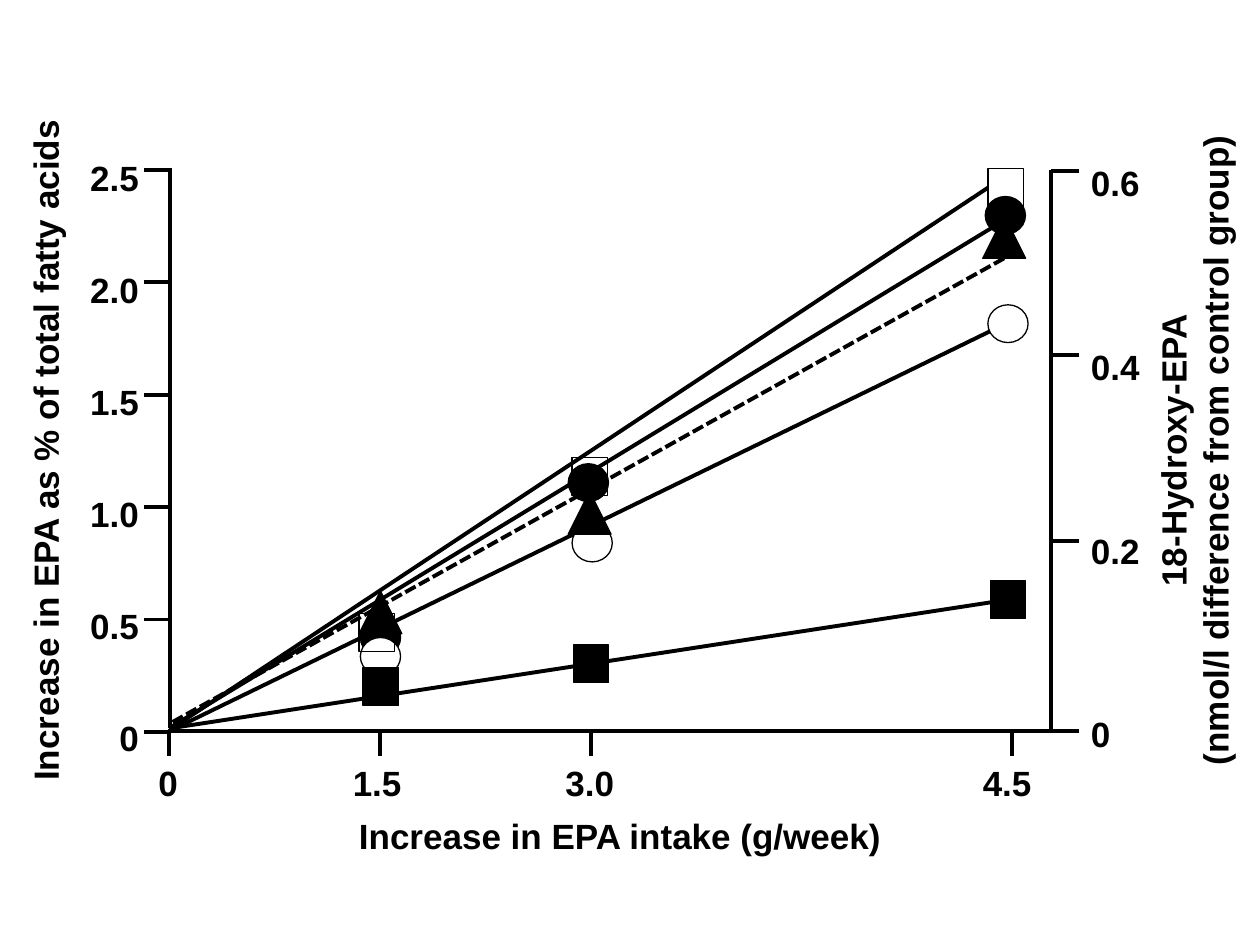
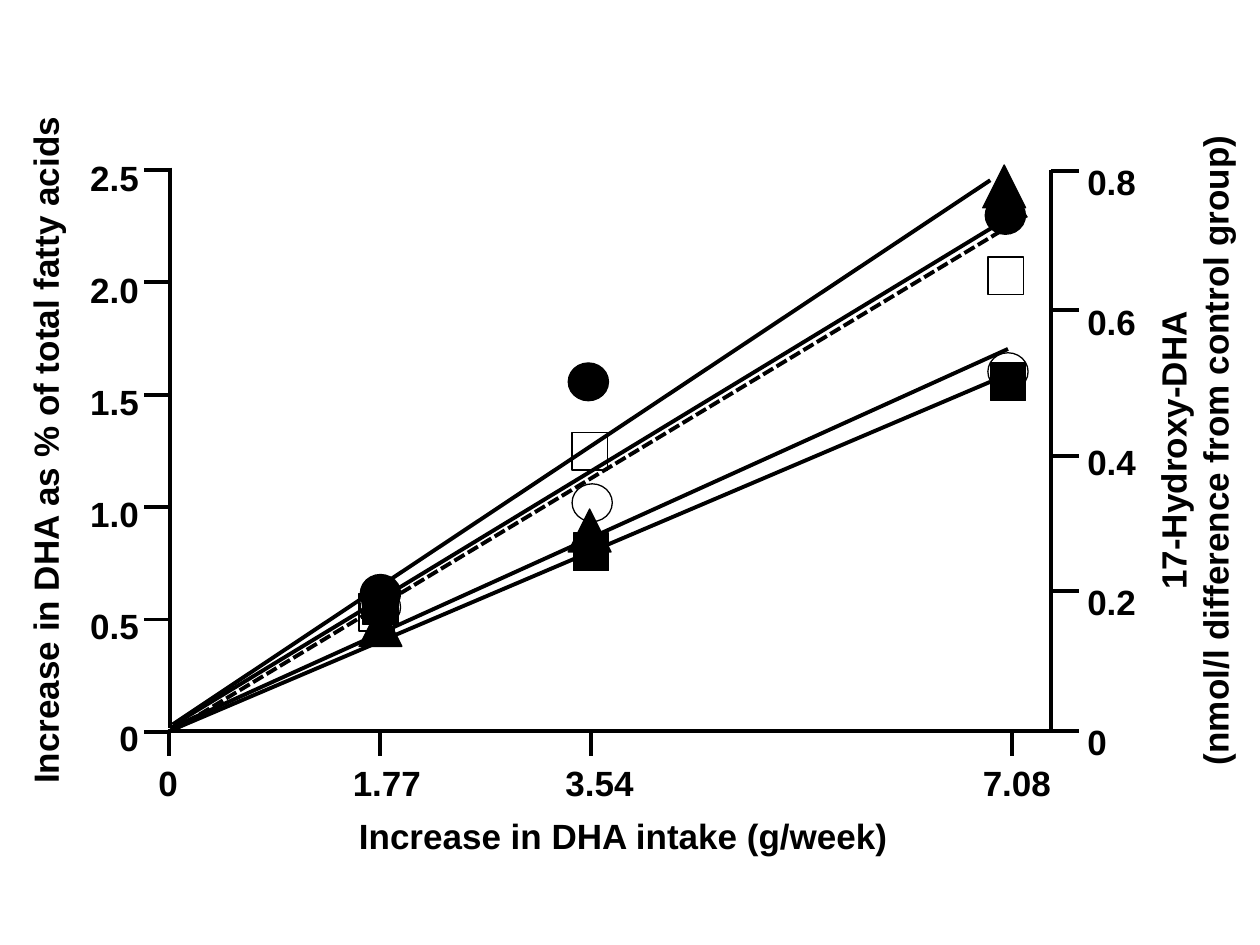
from pptx import Presentation
from pptx.dml.color import RGBColor
from pptx.enum.dml import MSO_LINE
from pptx.enum.shapes import MSO_CONNECTOR, MSO_SHAPE
from pptx.enum.text import PP_ALIGN
from pptx.oxml.ns import qn
from pptx.util import Pt
from lxml.etree import SubElement

COLORS = {"ink": "000000", "paper": "FFFFFF"}
FONT = "Arial"
PLOT = (97, 97, 503.5, 320.7)  # left, top, width, height
TICK = 14.5
DOSE_STEP = 120.5
DOSE_STEPS = (0, 1, 2, 4)
LABEL_STOPS = (111, 232.5, 471)

# Marker: shape, fill, width, height, left edge at each dose
MARKERS = {
    "filled circle": (MSO_SHAPE.OVAL, "ink", 23, 21.6, (108.9, 227.7, 466)),
    "open circle": (MSO_SHAPE.OVAL, "paper", 23, 21.6, (108.9, 229.9, 467.5)),
    "filled square": (MSO_SHAPE.RECTANGLE, "ink", 20.2, 21.6, (110.4, 230.6, 468.9)),
    "open square": (MSO_SHAPE.RECTANGLE, None, 20.2, 21.6, (108.2, 229.9, 467.5)),
    "triangle": (MSO_SHAPE.ISOSCELES_TRIANGLE, "ink", 24.5, 24.5, (108.2, 227.7, 464.6)),
}

# Positions are relative to the plot box
EPA = {
    "acid": "EPA",
    "metabolite": "18-Hydroxy-EPA",
    "doses": ("0", "1.5", "3.0", "4.5"),
    "right_labels": ("0.6", "0.4", "0.2", "0"),
    "right_label_box": (519.3, -19.2, 42.5, 356),
    "right_spacing": (35, 70),
    "right_ticks": (0.9, 106, 211.9, 320.6),
    "back_trends": ((0.2, 319.9, 467.5, 10.3), (0.2, 320.6, 477.6, 88)),
    "front_trends": ((-0.5, 319.2, 469.6, 33.3), (0.2, 319.2, 479, 245.7)),
    "dashed_trend": (1.6, 315.6, 476.8, 50.6),
    "tops": {
        "filled circle": (256.5, 168, 15.3),
        "open circle": (267.3, 202.5, 77.2),
        "filled square": (284.6, 271.6, 234.9),
        "open square": (253.6, 164.4, -0.5),
        "triangle": (240.7, 183.8, 26.1),
    },
}
DHA = {
    "acid": "DHA",
    "metabolite": "17-Hydroxy-DHA",
    "doses": ("0", "1.77", "3.54", "7.08"),
    "right_labels": ("0.8", "0.6", "0.4", "0.2", "0"),
    "right_label_box": (517.2, -25, 42.5, 365),
    "right_spacing": (40, 40),
    "right_ticks": (0.9, 80.1, 163.6, 240.7, 320.6),
    "back_trends": ((1.6, 317, 468.9, 6), (0.2, 320.6, 468.9, 121.2)),
    "front_trends": ((2.4, 317, 469.6, 33.3), (0.2, 319.2, 479, 102.4)),
    "dashed_trend": (1.6, 320.6, 489.8, 26.1),
    "tops": {
        "filled circle": (231.3, 110.4, 15.3),
        "open circle": (239.2, 179.5, 104.6),
        "filled square": (238.5, 207.6, 110.4),
        "open square": (242.1, 150, 49.9),
        "triangle": (247.9, 193.9, -2.7),
    },
}


def rgb(name):
    return RGBColor.from_string(COLORS[name])


def add_text(slide, box, lines, align=PP_ALIGN.LEFT, rotation=0, wrap=False,
             spacing=None, after=0, stops=(), size=20):
    label = slide.shapes.add_textbox(*map(Pt, box))
    label.rotation = rotation
    frame = label.text_frame
    frame.word_wrap = wrap
    for i, line in enumerate(lines):
        paragraph = frame.add_paragraph() if i else frame.paragraphs[0]
        paragraph.alignment = align
        if spacing:
            paragraph.line_spacing = Pt(spacing)
        if i < len(lines) - 1:
            paragraph.space_after = Pt(after)
        if stops:
            tabs = SubElement(paragraph._p.get_or_add_pPr(), qn("a:tabLst"))
            for stop in stops:
                SubElement(tabs, qn("a:tab"), pos=str(Pt(stop)), algn="l")
        run = paragraph.add_run()
        run.text = line
        run.font.name, run.font.size, run.font.bold = FONT, Pt(size), True
        run.font.color.rgb = rgb("ink")


def add_line(slide, box, ends, dash=None):
    left, top = box[:2]
    x1, y1, x2, y2 = ends
    line = slide.shapes.add_connector(
        MSO_CONNECTOR.STRAIGHT, Pt(left + x1), Pt(top + y1), Pt(left + x2), Pt(top + y2))
    line.line.color.rgb = rgb("ink")
    line.line.width = Pt(2.25)
    if dash:
        line.line.dash_style = dash
    SubElement(line._element.spPr, qn("a:effectLst"))


def add_markers(slide, box, series, tops):
    kind, fill, width, height, lefts = MARKERS[series]
    for x, y in zip(lefts, tops):
        marker = slide.shapes.add_shape(
            kind, Pt(box[0] + x), Pt(box[1] + y), Pt(width), Pt(height))
        marker.shadow.inherit = False
        if fill:
            marker.fill.solid()
            marker.fill.fore_color.rgb = rgb(fill)
        else:
            marker.fill.background()
        marker.line.color.rgb = rgb("ink")
        marker.line.width = Pt(0.75)


def draw_axes(slide, box, study):
    width, height = box[2:]
    # Axis lines
    add_line(slide, box, (0.2, -1.2, 0.2, height - 1.5))
    add_line(slide, box, (-1.2, height, width, height))
    add_line(slide, box, (width, 0.2, width, height))
    # Ticks
    for step in DOSE_STEPS:
        x = step * DOSE_STEP - 0.5
        add_line(slide, box, (x, height, x, height + TICK))
    for i in range(6):
        y = 0.2 + i * 64.2
        add_line(slide, box, (0.2, y, -TICK, y))
    for y in study["right_ticks"]:
        add_line(slide, box, (width, y, width + 16, y))


def draw_labels(slide, box, study):
    left, top, width, height = box
    acid = study["acid"]
    # Scales
    add_text(slide, (left - 53, top - 19.2, 42.5, 359),
             ("2.5", "2.0", "1.5", "1.0", "0.5", "0"),
             align=PP_ALIGN.RIGHT, spacing=32, after=32)
    x, y, w, h = study["right_label_box"]
    spacing, after = study["right_spacing"]
    add_text(slide, (left + x, top + y, w, h), study["right_labels"],
             spacing=spacing, after=after)
    # Dose labels: wide enough for the longest label after the last tab stop
    add_text(slide, (left - 13.5, top + height + 14, LABEL_STOPS[-1] + 80, 31.7),
             ("\t".join(study["doses"]),), stops=LABEL_STOPS, wrap=True)
    # Axis titles
    add_text(slide, (left + 101, top + height + 44.2, 317, 31.7),
             (f"Increase in {acid} intake (g/week)",))
    add_text(slide, (left - 269, top + 144.5, 396, 31.7),
             (f"Increase in {acid} as % of total fatty acids",),
             align=PP_ALIGN.CENTER, rotation=270)
    add_text(slide, (left + width - 108.3, top + 132.7, 380, 55.4),
             (study["metabolite"], "(nmol/l difference from control group)"),
             align=PP_ALIGN.CENTER, rotation=270)


def draw_data(slide, box, study):
    tops = study["tops"]
    for trend in study["back_trends"]:
        add_line(slide, box, trend)
    for series in ("filled circle", "open circle", "filled square"):
        add_markers(slide, box, series, tops[series])
    for trend in study["front_trends"]:
        add_line(slide, box, trend)
    for series in ("open square", "triangle"):
        add_markers(slide, box, series, tops[series])
    add_line(slide, box, study["dashed_trend"], dash=MSO_LINE.SQUARE_DOT)


def add_dose_slide(deck, study):
    slide = deck.slides.add_slide(deck.slide_layouts[6])
    draw_axes(slide, PLOT, study)
    draw_labels(slide, PLOT, study)
    draw_data(slide, PLOT, study)


def main():
    deck = Presentation()
    deck.slide_width, deck.slide_height = Pt(720), Pt(540)
    for study in (EPA, DHA):
        add_dose_slide(deck, study)
    deck.save("out.pptx")


if __name__ == "__main__":
    main()
